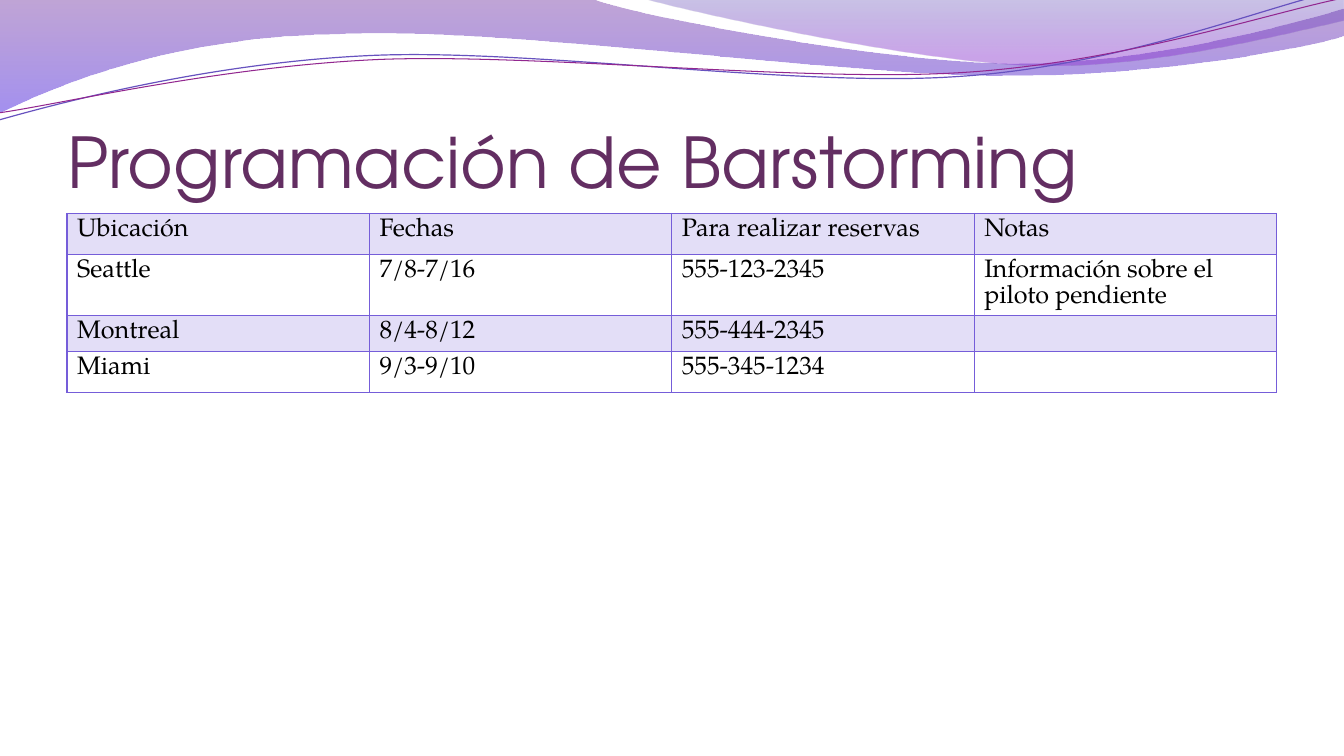
import lxml.etree
import pptx
import pptx.dml.color
import pptx.enum.text
import pptx.oxml.ns
import pptx.util

Cm = pptx.util.Cm
Pt = pptx.util.Pt
RGBColor = pptx.dml.color.RGBColor

PLUM = RGBColor(0x63, 0x2E, 0x62)
BLACK = RGBColor(0x00, 0x00, 0x00)
VIOLET = RGBColor(0x75, 0x5D, 0xD9)
PURPLE = RGBColor(0x74, 0x37, 0xA5)
BLUE = RGBColor(0x57, 0x35, 0xE4)
INDIGO = RGBColor(0x4E, 0x37, 0xAE)
ORCHID = RGBColor(0x8B, 0x37, 0xD0)
SLATE = RGBColor(0x67, 0x52, 0xBF)
MAGENTA = RGBColor(0x92, 0x27, 0x8F)

CM_PER_INCH = 2.54

# Waves are in inches: a start point, then segments of one point (line) or three (curve).
BROAD_WAVE = ((0, 0), [
    [(5.87, -0.01)],
    [(6.34, 0.17), (8.84, 0.63), (10.11, 0.63)],
    [(11.37, 0.63), (12.77, 0.26), (13.33, 0.09)],
    [(13.34, 0.36)],
    [(13.11, 0.44), (11.59, 0.76), (9.94, 0.75)],
    [(8.29, 0.75), (5.09, 0.28), (3.43, 0.34)],
    [(1.72, 0.36), (0.61, 0.83), (-0.02, 1.13)],
])
RIGHT_WAVE = ((6.38, -0.01), [
    [(6.79, 0.11), (9.09, 0.62), (10.25, 0.65)],
    [(11.4, 0.69), (12.82, 0.32), (13.33, 0.21)],
    [(13.33, 0)],
])
SLATE_LINE = ((-0.01, 1.19), [
    [(0.63, 1.01), (2.1, 0.62), (3.69, 0.55)],
    [(5.27, 0.48), (7.89, 0.87), (9.49, 0.76)],
    [(11.1, 0.66), (12.51, 0.08), (13.3, -0.1)],
])
MAGENTA_LINE = ((-0.01, 1.12), [
    [(0.62, 1.03), (2.18, 0.66), (3.77, 0.59)],
    [(5.37, 0.53), (7.96, 0.82), (9.55, 0.72)],
    [(11.14, 0.62), (12.55, 0.14), (13.33, -0.02)],
])

SCHEDULE = [
    ["Ubicación", "Fechas", "Para realizar reservas", "Notas"],
    ["Seattle", "7/8-7/16", "555-123-2345", "Información sobre el piloto pendiente"],
    ["Montreal", "8/4-8/12", "555-444-2345", ""],
    ["Miami", "9/3-9/10", "555-345-1234", ""],
]
ROW_HEIGHTS = [1.04, 1.53, 0.91, 1.04]


def add_element(parent, tag, **attributes):
    return lxml.etree.SubElement(parent, pptx.oxml.ns.qn(tag), attributes)


def set_opacity(fill_element, percents):
    """Give each colour inside a fill its opacity, in order."""
    colours = list(fill_element.iter(pptx.oxml.ns.qn("a:srgbClr")))
    for colour, percent in zip(colours, percents):
        add_element(colour, "a:alpha", val=str(percent * 1000))


def bend(shape, segments):
    """Turn each three straight steps that stand for a curve into one Bézier curve."""
    steps = iter(list(shape.element.iter(pptx.oxml.ns.qn("a:lnTo"))))
    for segment in segments:
        first, *others = [next(steps) for _ in segment]
        if others:
            first.tag = pptx.oxml.ns.qn("a:cubicBezTo")
            for step in others:
                first.append(step[0])
                step.getparent().remove(step)


class SlideBuilder:
    title_font = "TeX Gyre Adventor"
    body_font = "TeX Gyre Pagella"

    def __init__(self, page):
        self.page = page

    def outline(self, wave, close):
        start, segments = wave
        points = [(Cm(x * CM_PER_INCH), Cm(y * CM_PER_INCH))
                  for x, y in [start, *sum(segments, [])]]
        builder = self.page.shapes.build_freeform(*points[0])
        builder.add_line_segments(points[1:], close=close)
        shape = builder.convert_to_shape()
        shape.shadow.inherit = False
        bend(shape, segments)
        return shape

    def filled_wave(self, wave, stops):
        """Draw a closed wave; stops are (position, colour, opacity) from top down."""
        shape = self.outline(wave, close=True)
        shape.line.fill.background()
        shape.fill.gradient()
        shape.fill.gradient_angle = 270
        for stop, (position, colour, _) in zip(shape.fill.gradient_stops, stops):
            stop.position = position
            stop.color.rgb = colour
        gradient = shape.element.spPr.find(pptx.oxml.ns.qn("a:gradFill"))
        set_opacity(gradient, [opacity for _, _, opacity in stops])

    def wave_line(self, wave, colour, width):
        shape = self.outline(wave, close=False)
        shape.fill.background()
        shape.line.color.rgb = colour
        shape.line.width = Pt(width)

    def style(self, paragraph, font_name, size, colour, spacing):
        paragraph.font.name = font_name
        paragraph.font.size = Pt(size)
        paragraph.font.color.rgb = colour
        paragraph.line_spacing = spacing

    def title(self, text, left, top, width, height):
        box = self.page.shapes.add_textbox(Cm(left), Cm(top), Cm(width), Cm(height))
        frame = box.text_frame
        frame.word_wrap = True
        frame.vertical_anchor = pptx.enum.text.MSO_ANCHOR.BOTTOM
        frame.margin_left = frame.margin_right = frame.margin_bottom = 0
        frame.text = text
        self.style(frame.paragraphs[0], self.title_font, 50, PLUM, 0.9)

    def table(self, rows, heights, left, top, width):
        frame = self.page.shapes.add_table(len(rows), len(rows[0]), Cm(left), Cm(top),
                                           Cm(width), Cm(sum(heights)))
        table = frame.table
        table.first_row = table.horz_banding = False
        for index, (texts, height) in enumerate(zip(rows, heights)):
            table.rows[index].height = Cm(height)
            for column, text in enumerate(texts):
                self.cell(table.cell(index, column), text, shaded=index % 2 == 0)

    def cell(self, cell, text, shaded):
        paragraph = cell.text_frame.paragraphs[0]
        if text:
            paragraph.text = text
            self.style(paragraph, self.body_font, 18, BLACK, Pt(18))
        else:
            # A small end mark keeps an empty cell from stretching its row.
            add_element(paragraph._p, "a:endParaRPr", sz="1200")
        properties = cell._tc.get_or_add_tcPr()
        for side in ("a:lnL", "a:lnR", "a:lnT", "a:lnB"):
            border = add_element(properties, side, w=str(Pt(1)))
            add_element(add_element(border, "a:solidFill"), "a:srgbClr", val=str(VIOLET))
        if shaded:
            cell.fill.solid()
            cell.fill.fore_color.rgb = VIOLET
            set_opacity(properties.find(pptx.oxml.ns.qn("a:solidFill")), [20])
        else:
            cell.fill.background()


def main():
    deck = pptx.Presentation()
    deck.slide_width, deck.slide_height = Cm(33.87), Cm(19.05)
    slide = SlideBuilder(deck.slides.add_slide(deck.slide_layouts[6]))
    slide.filled_wave(BROAD_WAVE, [(0, PURPLE, 45), (1, BLUE, 55)])
    slide.filled_wave(RIGHT_WAVE, [(0, INDIGO, 30), (0.8, ORCHID, 45)])
    slide.wave_line(SLATE_LINE, SLATE, 0.85)
    slide.wave_line(MAGENTA_LINE, MAGENTA, 0.75)
    slide.title("Programación de Barstorming", 1.69, 1.95, 30.48, 3.18)
    slide.table(SCHEDULE, ROW_HEIGHTS, 1.69, 5.38, 30.48)
    deck.save("out.pptx")


if __name__ == "__main__":
    main()
